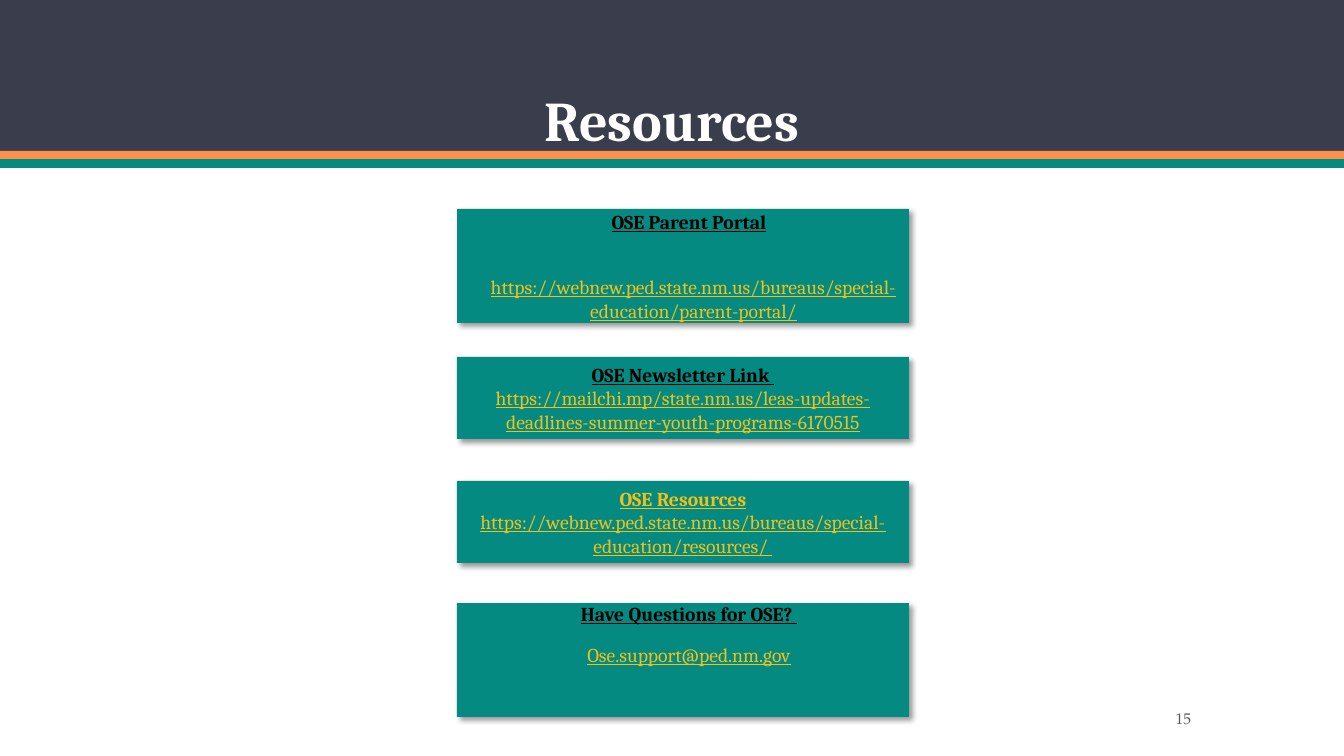
from lxml import etree
from pptx import Presentation
from pptx.dml.color import RGBColor
from pptx.enum.shapes import MSO_SHAPE as Shape
from pptx.enum.text import MSO_ANCHOR as Anchor, MSO_AUTO_SIZE as AutoSize, PP_ALIGN as Align
from pptx.oxml.ns import qn
from pptx.util import Emu, Pt

EMU_PER_PX = 914400 / 100.8
PAGE_WIDTH, PAGE_HEIGHT = 1344, 756
CARD_LEFT, CARD_WIDTH = 457, 452
SHORT_CARD, TALL_CARD = 82, 114

NAVY = RGBColor(0x3A, 0x3D, 0x4B)
ORANGE = RGBColor(0xFF, 0x91, 0x4D)
TEAL = RGBColor(0x04, 0x8A, 0x81)
GOLD = RGBColor(0xEF, 0xC1, 0x19)
BLACK = RGBColor(0x00, 0x00, 0x00)
WHITE = RGBColor(0xFF, 0xFF, 0xFF)
GREY = RGBColor(0x59, 0x59, 0x59)


def px(value):
    return Emu(round(value * EMU_PER_PX))


def place(shape, left, top, width, height):
    shape.left, shape.top = px(left), px(top)
    shape.width, shape.height = px(width), px(height)


def add_block(page, left, top, width, height, color):
    block = page.shapes.add_shape(Shape.RECTANGLE, px(left), px(top), px(width), px(height))
    block.shadow.inherit = False
    block.fill.solid()
    block.fill.fore_color.rgb = color
    block.line.fill.background()
    return block


def add_shadow(shape):
    properties = shape._element.spPr
    for old in properties.findall(qn("a:effectLst")):
        properties.remove(old)
    effects = etree.SubElement(properties, qn("a:effectLst"))
    shadow = etree.SubElement(effects, qn("a:outerShdw"), blurRad=str(Pt(4)),
                              dist=str(Pt(3)), dir="2700000", algn="tl", rotWithShape="0")
    color = etree.SubElement(shadow, qn("a:srgbClr"), val="000000")
    etree.SubElement(color, qn("a:alpha"), val="40000")


def set_frame(shape, anchor, auto_size=AutoSize.NONE):
    frame = shape.text_frame
    frame.word_wrap = True
    frame.auto_size = auto_size
    frame.vertical_anchor = anchor
    return frame


def write_lines(frame, lines, align=Align.CENTER, spacing=None, gap=0, indent=0):
    """Write one paragraph per (text, size, color, bold, underline) entry."""
    for index, (text, size, color, bold, underline) in enumerate(lines):
        para = frame.paragraphs[0] if index == 0 else frame.add_paragraph()
        settings = para._p.get_or_add_pPr()
        settings.set("marL", str(px(indent)))
        settings.set("indent", "0")
        etree.SubElement(settings, qn("a:buNone"))
        para.alignment = align
        para.line_spacing = spacing
        para.space_before = Pt(gap if index else 0)
        run = para.add_run()
        run.text = text
        run.font.name = "Cambria"
        run.font.size = Pt(size)
        run.font.bold = bold
        run.font.underline = underline
        run.font.color.rgb = color


def heading(text, color=BLACK):
    return text, 14, color, True, True


def link(text):
    return text, 14, GOLD, False, True


def add_card(page, top, height, lines, anchor=Anchor.MIDDLE, **layout):
    card = add_block(page, CARD_LEFT, top, CARD_WIDTH, height, TEAL)
    add_shadow(card)
    write_lines(set_frame(card, anchor), lines, **layout)


def add_text(page, left, top, width, height, lines, anchor, **layout):
    box = page.shapes.add_textbox(px(left), px(top), px(width), px(height))
    write_lines(set_frame(box, anchor), lines, **layout)
    return box


def main():
    deck = Presentation()
    deck.slide_width, deck.slide_height = px(PAGE_WIDTH), px(PAGE_HEIGHT)
    page = deck.slides.add_slide(deck.slide_layouts[1])

    # Header bands, with the title in front of them
    for top, height, color in ((0, 151, NAVY), (151, 8, ORANGE), (159, 9, TEAL)):
        add_block(page, 0, top, PAGE_WIDTH, height, color)
    title = page.shapes.title
    page.shapes._spTree.append(title._element)
    place(title, 143, 45, 1058, 114)
    write_lines(set_frame(title, Anchor.BOTTOM),
                [("Resources", 40, WHITE, True, False)], spacing=0.9)

    # Parent portal card: heading in the body placeholder, link on top
    portal = page.placeholders[1]
    place(portal, CARD_LEFT, 209, CARD_WIDTH, TALL_CARD)
    portal.fill.solid()
    portal.fill.fore_color.rgb = TEAL
    add_shadow(portal)
    write_lines(set_frame(portal, Anchor.TOP), [heading("OSE Parent Portal")],
                spacing=0.8, indent=12)
    add_text(page, 479, 270, 429, 57, [link(
        "https://webnew.ped.state.nm.us/bureaus/special-education/parent-portal/")], Anchor.TOP)

    # Remaining cards
    add_card(page, 357, SHORT_CARD, [
        heading("OSE Newsletter Link "),
        link("https://mailchi.mp/state.nm.us/leas-updates-deadlines-summer-youth-programs-6170515")])
    add_card(page, 481, SHORT_CARD, [
        heading("OSE Resources", GOLD),
        link("https://webnew.ped.state.nm.us/bureaus/special-education/resources/ ")])
    add_card(page, 603, TALL_CARD, [
        heading("Have Questions for OSE? "), link("Ose.support@ped.nm.gov")],
        Anchor.TOP, spacing=0.7, gap=18, indent=12)

    # Page number
    number = add_text(page, 1050, 703, 151, 30, [("15", 11, GREY, False, False)],
                      Anchor.MIDDLE, align=Align.RIGHT)
    number.text_frame.paragraphs[0].runs[0].font.name = "TeX Gyre Pagella"

    deck.save("out.pptx")


if __name__ == "__main__":
    main()
